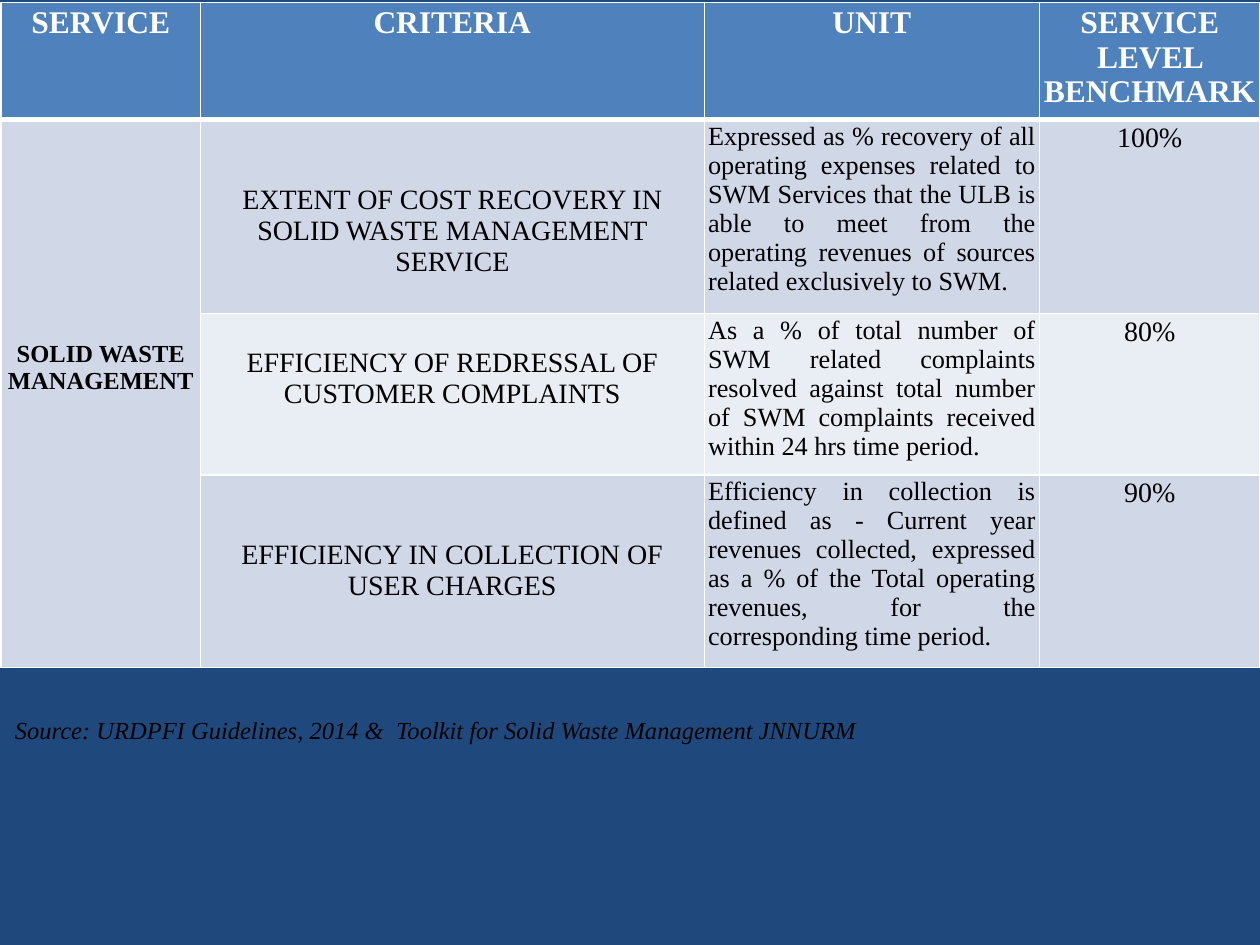
"""Build a slide of service level benchmarks for solid waste management."""
from lxml import etree
from pptx import Presentation
from pptx import util as u
from pptx.dml.color import RGBColor
from pptx.enum import text
from pptx.oxml import ns

COLORS = {
    "background": "1F497D", "header": "4F81BD", "band": "D0D8E8",
    "light": "E9EDF4", "white": "FFFFFF", "black": "000000",
}
FONT = "Times New Roman"
COLUMN_WIDTHS = [1.58, 4, 2.66, 1.75]
ROW_HEIGHTS = [0.93, 1.54, 1.28, 1.53]
LINE_HEIGHT = 0.246
HEADINGS = ["SERVICE", "CRITERIA", "UNIT", "SERVICE LEVEL BENCHMARK"]
SERVICE = "SOLID WASTE MANAGEMENT"
BENCHMARKS = [
    ("EXTENT OF COST RECOVERY IN SOLID WASTE MANAGEMENT SERVICE", 2,
     "Expressed as % recovery of all operating expenses related to SWM Services "
     "that the ULB is able to meet from the operating revenues of sources "
     "related exclusively to SWM.", "100%"),
    ("EFFICIENCY OF REDRESSAL OF CUSTOMER COMPLAINTS", 1,
     "As a % of total number of SWM related complaints resolved against total "
     "number of SWM complaints received within 24 hrs time period.", "80%"),
    ("EFFICIENCY IN COLLECTION OF USER CHARGES", 2,
     "Efficiency in collection is defined as - Current year revenues collected, "
     "expressed as a % of the Total operating revenues, for the corresponding "
     "time period.", "90%"),
]
SOURCE = "Source: URDPFI Guidelines, 2014 &  Toolkit for Solid Waste Management JNNURM"


def rgb(name):
    """Return the named colour."""
    return RGBColor.from_string(COLORS[name])


def add_run(paragraph, words, size, color="black", bold=False, italic=False):
    """Add one formatted run to a paragraph."""
    run = paragraph.add_run()
    run.text = words
    font = run.font
    font.name, font.size, font.bold, font.italic = FONT, u.Pt(size), bold, italic
    font.color.rgb = rgb(color)


def set_borders(cell, top=1, bottom=1):
    """Draw white lines on the four sides of a cell."""
    properties = cell._tc.get_or_add_tcPr()
    for side, points in {"L": 1, "R": 1, "T": top, "B": bottom}.items():
        line = etree.SubElement(properties, ns.qn(f"a:ln{side}"), w=str(u.Pt(points)))
        fill = etree.SubElement(line, ns.qn("a:solidFill"))
        etree.SubElement(fill, ns.qn("a:srgbClr"), val=COLORS["white"])


def style_cell(cell, fill, top=1, bottom=1):
    """Set the margins, borders and fill of a cell."""
    cell.margin_left = cell.margin_right = u.Inches(0.03)
    cell.margin_top = cell.margin_bottom = u.Inches(0.02)
    set_borders(cell, top, bottom)
    cell.fill.solid()
    cell.fill.fore_color.rgb = rgb(fill)


def write_cell(cell, words, size, align=text.PP_ALIGN.CENTER, **look):
    """Write one aligned paragraph in a cell."""
    paragraph = cell.text_frame.paragraphs[0]
    paragraph.alignment = align
    add_run(paragraph, words, size, **look)


def add_benchmark_table(slide):
    """Add the table of criteria, units and benchmarks."""
    frame = slide.shapes.add_table(
        len(ROW_HEIGHTS), len(COLUMN_WIDTHS), u.Inches(0.01), u.Inches(0.02),
        u.Inches(sum(COLUMN_WIDTHS)), u.Inches(sum(ROW_HEIGHTS)))
    table = frame.table
    table.first_row = table.horz_banding = False
    for column, width in zip(table.columns, COLUMN_WIDTHS):
        column.width = u.Inches(width)
    for row, height in zip(table.rows, ROW_HEIGHTS):
        row.height = u.Inches(height)

    for column, heading in enumerate(HEADINGS):
        cell = table.cell(0, column)
        style_cell(cell, "header", bottom=3)
        write_cell(cell, heading, 18, color="white", bold=True)

    for row, (criterion, lines_above, unit, level) in enumerate(BENCHMARKS, 1):
        service_cell, *cells = table.rows[row].cells
        top = 3 if row == 1 else 1
        style_cell(service_cell, "band", top)
        for cell in cells:
            style_cell(cell, "band" if row % 2 else "light", top)
        cells[0].margin_top = u.Inches(0.02 + lines_above * LINE_HEIGHT)
        write_cell(cells[0], criterion, 16)
        write_cell(cells[1], unit, 15, text.PP_ALIGN.JUSTIFY)
        write_cell(cells[2], level, 16)

    service = table.cell(1, 0)
    service.merge(table.cell(len(BENCHMARKS), 0))
    service.vertical_anchor = text.MSO_ANCHOR.MIDDLE
    service.margin_bottom = u.Inches(0.43)
    write_cell(service, SERVICE, 14, bold=True)


def add_source_line(slide, width, height):
    """Add the source of the figures below the table."""
    box = slide.shapes.add_textbox(
        u.Inches(0.02), int(height * 0.75), width, int(height * 0.045))
    box.text_frame.word_wrap = True
    add_run(box.text_frame.paragraphs[0], SOURCE, 14, italic=True)


def main():
    """Build and save the slide."""
    deck = Presentation()
    deck.slide_width, deck.slide_height = u.Inches(10), u.Inches(7.5)
    slide = deck.slides.add_slide(deck.slide_layouts[6])
    slide.background.fill.solid()
    slide.background.fill.fore_color.rgb = rgb("background")
    add_benchmark_table(slide)
    add_source_line(slide, deck.slide_width, deck.slide_height)
    deck.save("out.pptx")


if __name__ == "__main__":
    main()
